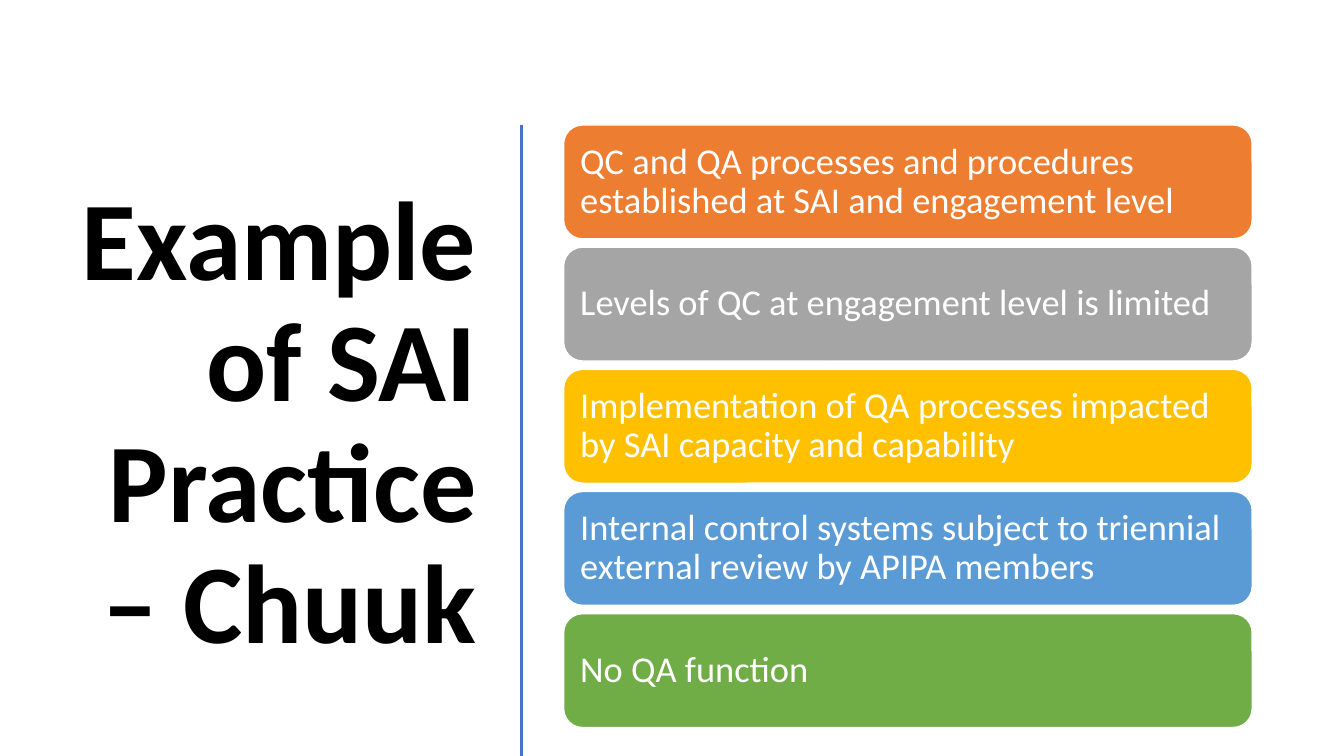
"""Build the slide on SAI practice in Chuuk."""
from dataclasses import dataclass

from lxml.etree import SubElement
from pptx import Presentation
from pptx.dml.color import RGBColor
from pptx.enum.shapes import MSO_CONNECTOR, MSO_SHAPE
from pptx.enum.text import MSO_ANCHOR, MSO_AUTO_SIZE, PP_ALIGN
from pptx.oxml.ns import qn
from pptx.slide import Slide
from pptx.text.text import TextFrame
from pptx.util import Inches, Pt

WIDTH, HEIGHT = 13.33, 7.5
COLOURS = {
    "black": "000000",
    "white": "FFFFFF",
    "divider": "4472C4",
    "orange": "ED7D31",
    "grey": "A5A5A5",
    "gold": "FFC000",
    "blue": "5B9BD5",
    "green": "70AD47",
}
FONT = "Calibri"
CARD_LEFT, CARD_TOP = 5.59 / WIDTH, 1.24 / HEIGHT
CARD_WIDTH, CARD_HEIGHT = 6.83 / WIDTH, 1.13 / HEIGHT
CARD_PITCH = 1.212 / HEIGHT
DIVIDER_X = 5.17 / WIDTH


@dataclass(frozen=True)
class Finding:
    text: str
    colour: str


FINDINGS = [
    Finding("QC and QA processes and procedures established at SAI and engagement level", "orange"),
    Finding("Levels of QC at engagement level is limited", "grey"),
    Finding("Implementation of QA processes impacted by SAI capacity and capability", "gold"),
    Finding("Internal control systems subject to triennial external review by APIPA members", "blue"),
    Finding("No QA function", "green"),
]


def across(share: float) -> int:
    return Inches(WIDTH * share)


def down(share: float) -> int:
    return Inches(HEIGHT * share)


def colour(name: str) -> RGBColor:
    return RGBColor.from_string(COLOURS[name])


def write(frame: TextFrame, text: str, size: int, ink: str, align: PP_ALIGN, bold: bool) -> None:
    frame.word_wrap = True
    frame.auto_size = MSO_AUTO_SIZE.NONE
    frame.vertical_anchor = MSO_ANCHOR.MIDDLE
    para = frame.paragraphs[0]
    para.alignment = align
    para.line_spacing = 0.9
    span = para.add_run()
    span.text = text
    span.font.name = FONT
    span.font.size = Pt(size)
    span.font.bold = bold
    span.font.color.rgb = colour(ink)


def add_title(page: Slide, text: str) -> None:
    title = page.shapes.title
    title.left, title.top = across(0.52 / WIDTH), down(1.17 / HEIGHT)
    title.width, title.height = across(4.31 / WIDTH), down(6.11 / HEIGHT)
    write(title.text_frame, text, 80, "black", PP_ALIGN.RIGHT, True)


def add_divider(page: Slide) -> None:
    divider = page.shapes.add_connector(
        MSO_CONNECTOR.STRAIGHT, across(DIVIDER_X), down(CARD_TOP), across(DIVIDER_X), down(1)
    )
    divider.line.color.rgb = colour("divider")
    divider.line.width = Pt(2)
    SubElement(divider._element.spPr, qn("a:effectLst"))


def add_card(page: Slide, row: int, finding: Finding) -> None:
    card = page.shapes.add_shape(
        MSO_SHAPE.ROUNDED_RECTANGLE,
        across(CARD_LEFT),
        down(CARD_TOP + row * CARD_PITCH),
        across(CARD_WIDTH),
        down(CARD_HEIGHT),
    )
    card.shadow.inherit = False
    card.fill.solid()
    card.fill.fore_color.rgb = colour(finding.colour)
    card.line.color.rgb = colour("white")
    card.line.width = Pt(1)
    frame = card.text_frame
    frame.margin_left = frame.margin_right = Inches(0.11)
    frame.margin_top = frame.margin_bottom = Inches(0.11)
    write(frame, finding.text, 26, "white", PP_ALIGN.LEFT, False)


def main() -> None:
    deck = Presentation()
    deck.slide_width, deck.slide_height = Inches(WIDTH), Inches(HEIGHT)
    page = deck.slides.add_slide(deck.slide_layouts[5])
    add_title(page, "Example of SAI Practice – Chuuk")
    add_divider(page)
    for row, finding in enumerate(FINDINGS):
        add_card(page, row, finding)
    deck.save("out.pptx")


if __name__ == "__main__":
    main()
